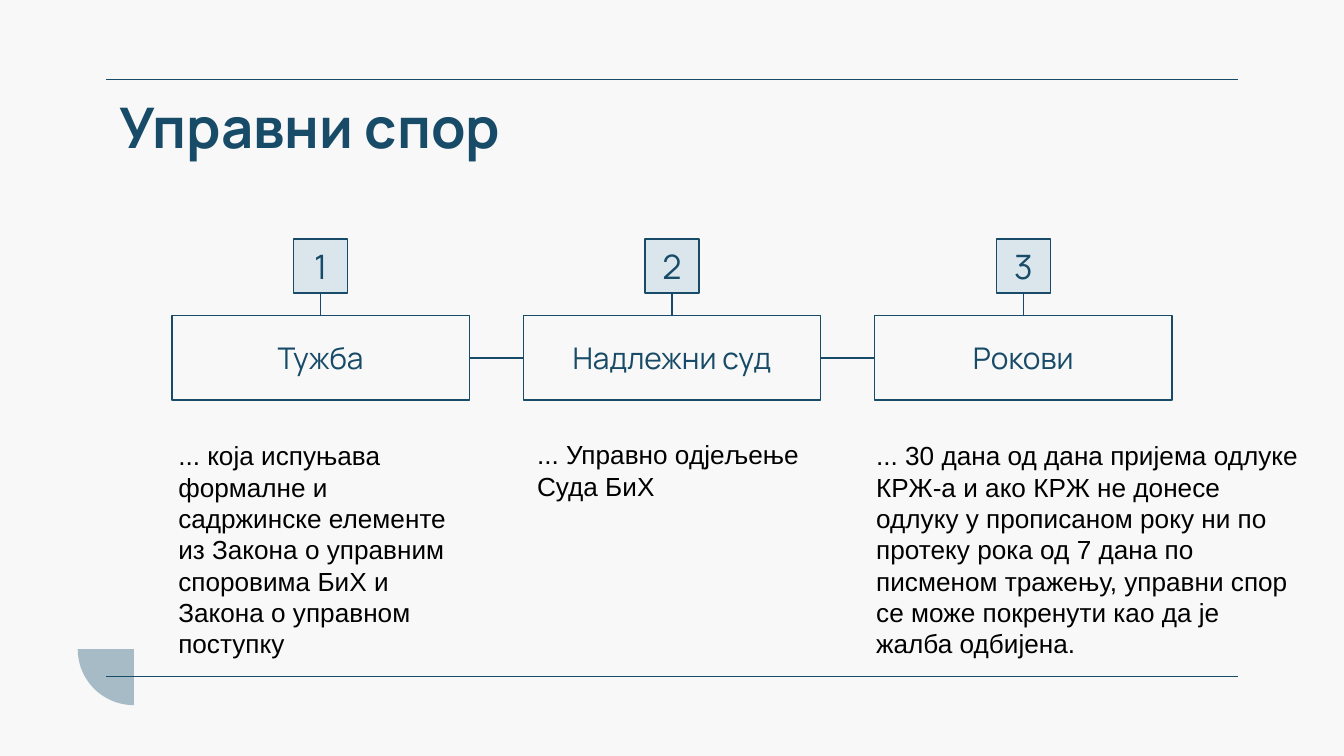
"""Builds the three-step administrative dispute slide."""
import math
from dataclasses import dataclass

from lxml import etree
from pptx import Presentation
from pptx import util as u
from pptx.dml.color import RGBColor
from pptx.enum import shapes, text
from pptx.oxml.ns import qn

NAVY, PALE, MIST, PAPER, BLACK = "174B67", "DAE6EC", "A7BBC7", "F8F8F8", "000000"
MIDDLE_X, PITCH = 12.7, 6.64
BOX_TOP, BOX_WIDTH, BOX_HEIGHT = 5.97, 5.62, 1.59
BADGE_TOP, BADGE_SIZE = 4.52, 1.02
RULE_LEFT, RULE_RIGHT = 2.01, 23.39
CORNER_X, CORNER_Y, CORNER_RADIUS = 2.53, 12.27, 1.06

TITLE = {"name": "Manrope", "size": u.Pt(30), "bold": True}
LABEL = {"name": "Manrope", "size": u.Pt(16)}
NUMBER = {"name": "Manrope", "size": u.Pt(18)}
BODY = {"name": "Arial", "size": u.Pt(14)}


@dataclass(frozen=True)
class Area:
    left: float
    top: float
    width: float
    height: float

    def lengths(self) -> list:
        return [u.Cm(value) for value in (self.left, self.top, self.width, self.height)]


@dataclass(frozen=True)
class Step:
    label: str
    detail: str
    detail_area: Area


STEPS = [
    Step("Тужба",
         "... која испуњава формалне и садржинске елементе из Закона о управним "
         "споровима БиХ и Закона о управном поступку",
         Area(3.12, 8.18, 5.74, 4.45)),
    Step("Надлежни суд", "... Управно одјељење Суда БиХ", Area(9.9, 8.16, 5.62, 1.45)),
    Step("Рокови",
         "... 30 дана од дана пријема одлуке КРЖ-а и ако КРЖ не донесе одлуку у "
         "прописаном року ни по протеку рока од 7 дана по писменом тражењу, управни "
         "спор се може покренути као да је жалба одбијена.",
         Area(16.31, 8.18, 8.56, 4.45)),
]


def paint(target, colour: str) -> None:
    """Give a fill one solid colour."""
    target.solid()
    target.fore_color.rgb = RGBColor.from_string(colour)


def write(shape, words: str, style: dict, colour: str, margin: float = 0.25) -> None:
    """Put one styled paragraph into a shape."""
    frame = shape.text_frame
    frame.word_wrap = True
    margins = {"margin_left": 0.25, "margin_right": 0.25,
               "margin_top": margin, "margin_bottom": margin}
    for name, value in margins.items():
        setattr(frame, name, u.Cm(value))
    span = frame.paragraphs[0].add_run()
    span.text = words
    for name, value in style.items():
        setattr(span.font, name, value)
    paint(span.font.fill, colour)


def add_text(page, area: Area, words: str, style: dict, colour: str, margin: float) -> None:
    """Add a plain text box."""
    write(page.shapes.add_textbox(*area.lengths()), words, style, colour, margin)


def add_box(page, area: Area, words: str, style: dict, fill: str | None = None) -> None:
    """Add an outlined rectangle with centred text."""
    box = page.shapes.add_shape(shapes.MSO_SHAPE.RECTANGLE, *area.lengths())
    box.shadow.inherit = False
    if fill:
        paint(box.fill, fill)
    else:
        box.fill.background()
    paint(box.line.fill, NAVY)
    box.line.width = u.Pt(0.75)
    write(box, words, style, NAVY)
    box.text_frame.vertical_anchor = text.MSO_ANCHOR.MIDDLE
    box.text_frame.paragraphs[0].alignment = text.PP_ALIGN.CENTER


def add_line(page, x1: float, y1: float, x2: float, y2: float,
             kind=shapes.MSO_CONNECTOR.STRAIGHT) -> None:
    """Add a thin connector without shadow."""
    line = page.shapes.add_connector(kind, *[u.Cm(value) for value in (x1, y1, x2, y2)])
    paint(line.line.fill, NAVY)
    line.line.width = u.Pt(0.75)
    etree.SubElement(line._element.spPr, qn("a:effectLst"))


def add_corner(page) -> None:
    """Add the quarter disc at the lower left."""
    angles = [math.radians(degrees) for degrees in range(90, 181, 3)]
    arc = [(u.Cm(CORNER_X + CORNER_RADIUS * math.cos(angle)),
            u.Cm(CORNER_Y + CORNER_RADIUS * math.sin(angle))) for angle in angles]
    builder = page.shapes.build_freeform(u.Cm(CORNER_X), u.Cm(CORNER_Y))
    builder.add_line_segments(arc, close=True)
    corner = builder.convert_to_shape()
    corner.shadow.inherit = False
    paint(corner.fill, MIST)
    corner.line.fill.background()


def add_step(page, index: int, step: Step) -> None:
    """Add a numbered step with its label, links and detail."""
    centre = MIDDLE_X + (index - 1) * PITCH
    left = centre - BOX_WIDTH / 2
    add_box(page, Area(left, BOX_TOP, BOX_WIDTH, BOX_HEIGHT), step.label, LABEL)
    add_box(page, Area(centre - BADGE_SIZE / 2, BADGE_TOP, BADGE_SIZE, BADGE_SIZE),
            str(index + 1), NUMBER, PALE)
    add_line(page, centre, BADGE_TOP + BADGE_SIZE, centre, BOX_TOP)
    if index:
        level = BOX_TOP + BOX_HEIGHT / 2
        add_line(page, left - PITCH + BOX_WIDTH, level, left, level,
                 shapes.MSO_CONNECTOR.ELBOW)
    add_text(page, step.detail_area, step.detail, BODY, BLACK, 0.13)


def main() -> None:
    """Build and save the deck."""
    deck = Presentation()
    deck.slide_width, deck.slide_height = u.Cm(25.4), u.Cm(14.29)
    page = deck.slides.add_slide(deck.slide_layouts[6])
    paint(page.background.fill, PAPER)
    add_corner(page)
    for level in (1.5, 12.79):
        add_line(page, RULE_LEFT, level, RULE_RIGHT, level)
    add_text(page, Area(2.01, 1.5, 21.41, 1.45), "Управни спор", TITLE, NAVY, 0.25)
    for index, step in enumerate(STEPS):
        add_step(page, index, step)
    deck.save("out.pptx")


if __name__ == "__main__":
    main()
